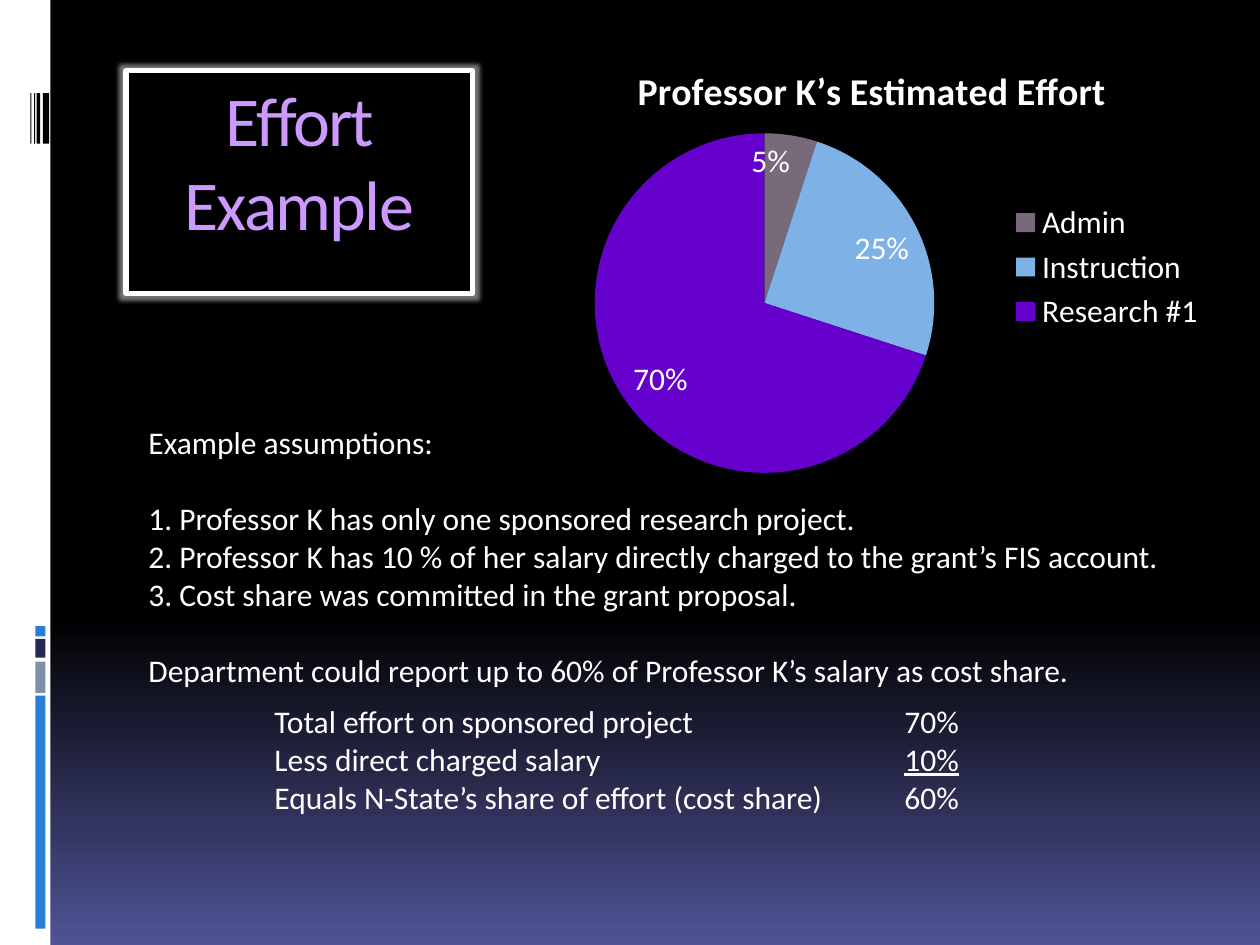
from dataclasses import dataclass

from lxml import etree
from pptx import Presentation
from pptx.chart.data import CategoryChartData
from pptx.dml.color import RGBColor
from pptx.enum.chart import XL_CHART_TYPE as CT, XL_LABEL_POSITION as LP, XL_LEGEND_POSITION as LEG
from pptx.enum.shapes import MSO_SHAPE
from pptx.enum.text import MSO_ANCHOR, MSO_AUTO_SIZE, PP_ALIGN
from pptx.oxml import parse_xml
from pptx.oxml.ns import nsdecls, qn
from pptx.util import Inches, Pt


@dataclass(frozen=True)
class Theme:
    font: str = "Calibri"
    white: str = "FFFFFF"
    black: str = "000000"
    dusk: str = "4F5395"
    lilac: str = "CC99FF"
    blue: str = "297FD5"
    grey: str = "7F8FA9"
    navy: str = "242852"
    title: float = 40
    chart_title: float = 21.6
    body: float = 18


T = Theme()

TITLE = "Effort Example"
CHART_TITLE = "Professor K’s Estimated Effort"
EFFORT = [("Admin", 5, "78697B"), ("Instruction", 25, "7EB2E6"), ("Research #1", 70, "6600CC")]

BLANK_LINE, SMALL_GAP = 22, 7.3
NOTES = [
    ("Example assumptions:", 0),
    ("1. Professor K has only one sponsored research project.", BLANK_LINE),
    ("2. Professor K has 10 % of her salary directly charged to the grant’s FIS account.", 0),
    ("3. Cost share was committed in the grant proposal.", 0),
    ("Department could report up to 60% of Professor K’s salary as cost share.", BLANK_LINE),
]
COST_SHARE = [
    ("Total effort on sponsored project", "70%", False),
    ("Less direct charged salary", "10%", True),
    ("Equals N-State’s share of effort (cost share)", "60%", False),
]
TAB_STOPS = (1, 6)

SIDE_BAND = (0, 0, 0.4, 7.5, T.white)
BLOCKS = [(5.52, 1.85, T.blue), (5.25, 0.25, T.grey), (5.07, 0.15, T.navy), (4.97, 0.08, T.blue)]
BARS = [(0.34, 0.05), (0.29, 0.03), (0.27, 0.01), (0.24, 0.01)]


def rgb(value):
    return RGBColor.from_string(value)


def set_font(font, size=T.body, color=T.white, bold=False, underline=None):
    font.name, font.size, font.bold = T.font, Pt(size), bold
    font.color.rgb = rgb(color)
    if underline is not None:
        font.underline = underline


def add_text(p, text, align=None, before=0, spacing=None, **style):
    if align is not None:
        p.alignment = align
    p.space_before = Pt(before)
    r = p.add_run()
    r.text = text
    set_font(r.font, **style)
    if spacing is not None:
        r.font._element.set("spc", str(spacing))
    return r


def add_rect(s, x, y, w, h, color):
    sp = s.shapes.add_shape(MSO_SHAPE.RECTANGLE, *map(Inches, (x, y, w, h)))
    sp.shadow.inherit = False
    sp.fill.solid()
    sp.fill.fore_color.rgb = rgb(color)
    sp.line.fill.background()


def set_background(s):
    fill = s.background.fill
    fill.gradient()
    fill.gradient_angle = 270
    for stop, (position, color) in zip(fill.gradient_stops, [(0.65, T.black), (1, T.dusk)]):
        stop.position = position
        stop.color.rgb = rgb(color)


def add_side_band(s):
    add_rect(s, *SIDE_BAND)
    for y, h, color in BLOCKS:
        add_rect(s, 0.28, y, 0.08, h, color)
    for x, w in BARS:
        add_rect(s, x, 0.74, w, 0.4, T.black)


def add_title(s):
    sp = s.shapes.title
    sp.left, sp.top, sp.width, sp.height = map(Inches, (1, 0.56, 2.75, 1.77))
    sp.fill.solid()
    sp.fill.fore_color.rgb = rgb(T.black)
    sp.line.color.rgb = rgb(T.white)
    sp.line.width = Pt(3)
    sp._element.spPr.append(parse_xml(
        f'<a:effectLst {nsdecls("a")}><a:glow rad="63500"><a:srgbClr val="{T.white}">'
        '<a:alpha val="45000"/></a:srgbClr></a:glow></a:effectLst>'))
    tf = sp.text_frame
    tf.word_wrap, tf.auto_size, tf.vertical_anchor = True, MSO_AUTO_SIZE.NONE, MSO_ANCHOR.TOP
    add_text(tf.paragraphs[0], TITLE, align=PP_ALIGN.CENTER, size=T.title, color=T.lilac, spacing=-100)


def add_pie(s):
    data = CategoryChartData()
    data.categories = [name for name, _, _ in EFFORT]
    data.add_series("Series 1", [value for _, value, _ in EFFORT])
    box = map(Inches, (4.17, 0.33, 5.5, 3.58))
    chart = s.shapes.add_chart(CT.PIE, *box, data).chart
    set_font(chart.font)
    chart.has_title = True
    add_text(chart.chart_title.text_frame.paragraphs[0], CHART_TITLE, size=T.chart_title, bold=True)
    chart.has_legend = True
    chart.legend.position = LEG.RIGHT
    chart.legend.include_in_layout = False
    set_font(chart.legend.font)
    plot = chart.plots[0]
    plot.vary_by_categories = True
    for i, (_, _, color) in enumerate(EFFORT):
        fill = plot.series[0].points[i].format.fill
        fill.solid()
        fill.fore_color.rgb = rgb(color)
    labels = plot.series[0].data_labels
    labels.show_percentage, labels.show_value = True, False
    labels.position = LP.INSIDE_END
    set_font(labels.font)
    area = chart._chartSpace.chart.plotArea
    for old in area.findall(qn("c:layout")):
        area.remove(old)
    layout = etree.Element(qn("c:layout"))
    manual = etree.SubElement(layout, qn("c:manualLayout"))
    for tag, value in [("layoutTarget", "inner"), ("xMode", "edge"), ("yMode", "edge"),
                       ("x", 0.1), ("y", 0.2), ("w", 0.49), ("h", 0.76)]:
        etree.SubElement(manual, qn(f"c:{tag}")).set("val", str(value))
    area.insert(0, layout)


def add_tab_stops(p):
    tabs = etree.SubElement(p._p.get_or_add_pPr(), qn("a:tabLst"))
    for stop in TAB_STOPS:
        etree.SubElement(tabs, qn("a:tab"), pos=str(Inches(stop)), algn="l")


def add_notes(s):
    tf = s.shapes.add_textbox(*map(Inches, (1.08, 3.31, 8.43, 3.53))).text_frame
    tf.word_wrap = True
    for i, (text, before) in enumerate(NOTES):
        add_text(tf.add_paragraph() if i else tf.paragraphs[0], text, before=before)
    for i, (label, share, underlined) in enumerate(COST_SHARE):
        p = tf.add_paragraph()
        add_text(p, f"\t{label}\t", before=0 if i else SMALL_GAP)
        add_text(p, share, before=0 if i else SMALL_GAP, underline=underlined)
        add_tab_stops(p)


def main():
    prs = Presentation()
    prs.slide_width, prs.slide_height = Inches(10), Inches(7.5)
    s = prs.slides.add_slide(prs.slide_layouts[5])
    set_background(s)
    add_side_band(s)
    add_title(s)
    add_pie(s)
    add_notes(s)
    prs.save("out.pptx")


if __name__ == "__main__":
    main()
